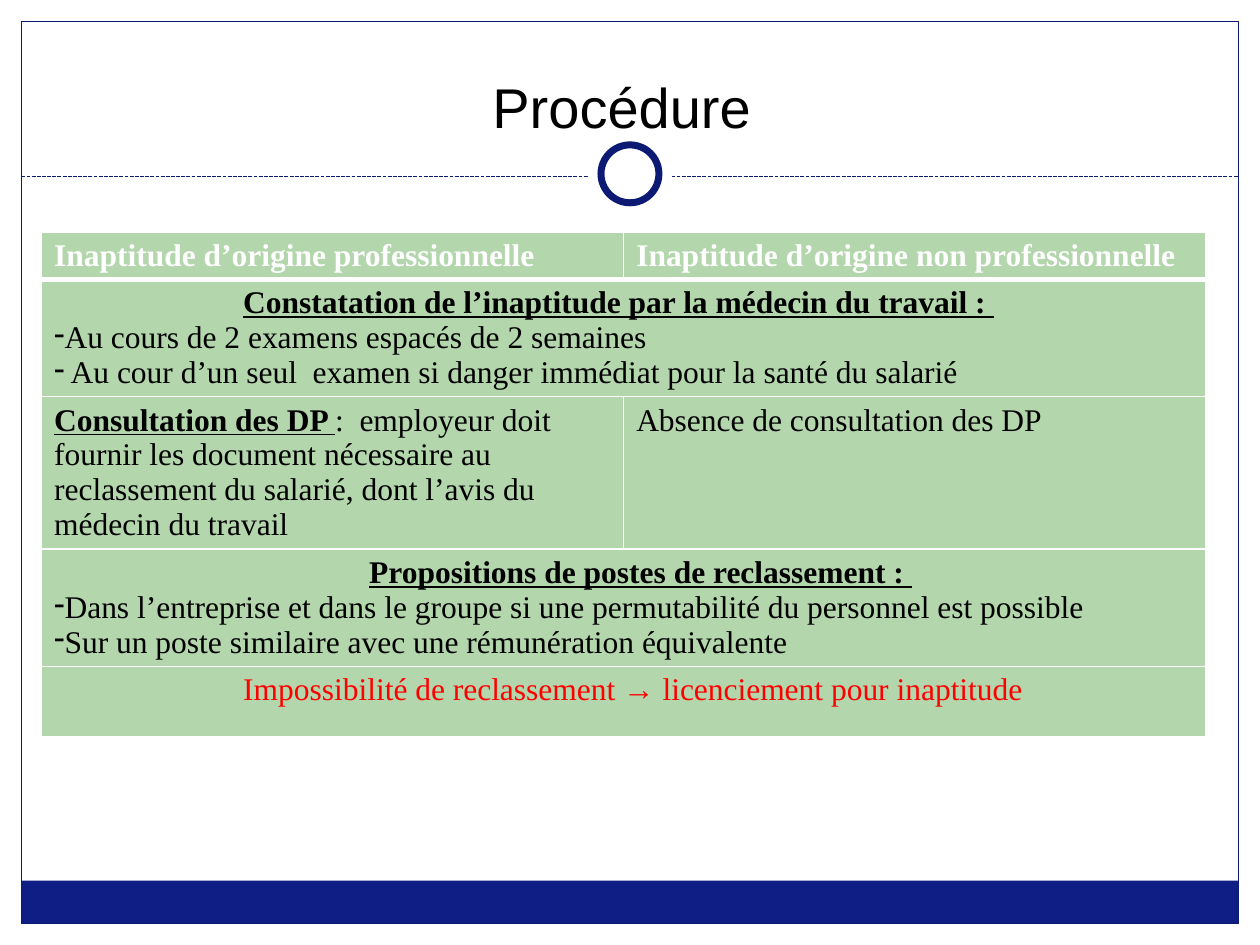
import pptx
import pptx.dml.color
import pptx.enum.dml
import pptx.enum.shapes
import pptx.enum.text
import pptx.oxml.ns
import pptx.util
from lxml import etree

WIDTH, HEIGHT = 10, 7.5
MARGIN = 0.17
NAVY, BAND, GREEN = "0C1A74", "0E1E84", "B3D6AC"
WHITE, BLACK, RED = "FFFFFF", "000000", "FF0000"
SHAPES = pptx.enum.shapes.MSO_SHAPE
COLUMNS = [4.62, 4.62]
ROWS = [0.34, 0.93, 1.21, 0.93, 0.56]

PLAIN = {"color": BLACK}
HEADER = {"color": WHITE, "bold": True}
HEADING = {"color": BLACK, "bold": True, "underline": True}
WARNING = {"color": RED}


def color(value):
    return pptx.dml.color.RGBColor.from_string(value)


def inches(*lengths):
    return [pptx.util.Inches(length) for length in lengths]


def child(parent, tag, **attributes):
    return etree.SubElement(parent, pptx.oxml.ns.qn(tag), attributes)


def add_shape(page, kind, place, fill=None, line=None, weight=0.75):
    shape = page.shapes.add_shape(kind, *inches(*place))
    shape.shadow.inherit = False
    if fill:
        shape.fill.solid()
        shape.fill.fore_color.rgb = color(fill)
    else:
        shape.fill.background()
    if line:
        shape.line.color.rgb = color(line)
        shape.line.width = pptx.util.Pt(weight)
    else:
        shape.line.fill.background()


def add_circle(page, middle, diameter, **style):
    left, top = WIDTH / 2 - diameter / 2, middle - diameter / 2
    add_shape(page, SHAPES.OVAL, (left, top, diameter, diameter), WHITE, **style)


def add_dashes(page, height):
    rule = page.shapes.add_connector(
        pptx.enum.shapes.MSO_CONNECTOR.STRAIGHT,
        *inches(MARGIN, height, WIDTH - MARGIN, height))
    rule.line.color.rgb = color(NAVY)
    rule.line.width = pptx.util.Pt(0.75)
    rule.line.dash_style = pptx.enum.dml.MSO_LINE.SQUARE_DOT
    child(rule._element.spPr, "a:effectLst")


def add_frame(page):
    inner = WIDTH - 2 * MARGIN
    add_shape(page, SHAPES.RECTANGLE, (MARGIN, 6.99, inner, 0.34), BAND)
    add_shape(page, SHAPES.RECTANGLE,
              (MARGIN, MARGIN, inner, HEIGHT - 2 * MARGIN), line=NAVY)
    add_dashes(page, 1.4)
    add_circle(page, 1.38, 0.67)
    add_circle(page, 1.38, 0.46, line=NAVY, weight=4)


def format_font(font, name, size, color_value, bold=False, underline=False):
    font.name = name
    font.size = pptx.util.Pt(size)
    font.color.rgb = color(color_value)
    font.bold = bold
    font.underline = underline


def set_title(page, text):
    title = page.shapes.title
    title.left, title.top, title.width, title.height = inches(0.33, 0.25, 9.33, 1.42)
    frame = title.text_frame
    frame.text = text
    frame.word_wrap = True
    frame.vertical_anchor = pptx.enum.text.MSO_ANCHOR.BOTTOM
    frame.margin_bottom, frame.margin_right = inches(0.56, 0.22)
    para = frame.paragraphs[0]
    para.alignment = pptx.enum.text.PP_ALIGN.CENTER
    format_font(para.runs[0].font, "Arial", 32, BLACK)
    page.shapes._spTree.append(title._element)


def write_para(para, spans, level=0, bullet=False):
    para.level = level
    properties = para._p.get_or_add_pPr()
    if level:
        properties.set("marL", str(pptx.util.Inches(level / 2)))
        properties.set("indent", "0")
    if bullet:
        child(properties, "a:buFontTx")
        child(properties, "a:buChar", char="-")
    for text, style in spans:
        span = para.add_run()
        span.text = text
        format_font(span.font, "Times New Roman", 18, style["color"],
                    style.get("bold", False), style.get("underline", False))


def heading(text, level, style=HEADING):
    return {"spans": [(text, style)], "level": level}


def item(text):
    return {"spans": [(text, PLAIN)], "bullet": True}


def plain(*spans):
    return {"spans": spans}


def format_cell(cell, bottom):
    properties = cell._tc.get_or_add_tcPr()
    for side, weight in (("L", 1), ("R", 1), ("T", 1), ("B", bottom)):
        line = child(properties, "a:ln" + side, w=str(pptx.util.Pt(weight)))
        child(child(line, "a:solidFill"), "a:srgbClr", val=WHITE)
    cell.fill.solid()
    cell.fill.fore_color.rgb = color(GREEN)


def add_comparison(page, content):
    table = page.shapes.add_table(
        len(ROWS), len(COLUMNS),
        *inches(0.33, 1.84, sum(COLUMNS), sum(ROWS))).table
    for column, width in zip(table.columns, COLUMNS):
        column.width = pptx.util.Inches(width)
    for index, (height, cells) in enumerate(zip(ROWS, content)):
        table.rows[index].height = pptx.util.Inches(height)
        for position in range(len(COLUMNS)):
            format_cell(table.cell(index, position), 1 if index else 3)
        if len(cells) == 1:
            table.cell(index, 0).merge(table.cell(index, 1))
        for position, paras in enumerate(cells):
            frame = table.cell(index, position).text_frame
            for number, para in enumerate(paras):
                target = frame.add_paragraph() if number else frame.paragraphs[0]
                write_para(target, **para)


def main():
    deck = pptx.Presentation()
    deck.slide_width, deck.slide_height = inches(WIDTH, HEIGHT)
    page = deck.slides.add_slide(deck.slide_layouts[5])
    add_frame(page)
    set_title(page, "Procédure")
    add_comparison(page, [
        [[plain(("Inaptitude d’origine professionnelle", HEADER))],
         [plain(("Inaptitude d’origine non professionnelle", HEADER))]],
        [[heading("Constatation de l’inaptitude par la médecin du travail : ", 3),
          item("Au cours de 2 examens espacés de 2 semaines"),
          item(" Au cour d’un seul  examen si danger immédiat pour la santé du salarié")]],
        [[plain(("Consultation des DP ", HEADING),
                (":  employeur doit fournir les document nécessaire au "
                 "reclassement du salarié, dont l’avis du médecin du travail", PLAIN))],
         [plain(("Absence de consultation des DP", PLAIN))]],
        [[heading("Propositions de postes de reclassement : ", 5),
          item("Dans l’entreprise et dans le groupe si une permutabilité "
               "du personnel est possible"),
          item("Sur un poste similaire avec une rémunération équivalente")]],
        [[heading("Impossibilité de reclassement → licenciement pour inaptitude",
                  3, WARNING)]],
    ])
    deck.save("out.pptx")


if __name__ == "__main__":
    main()
